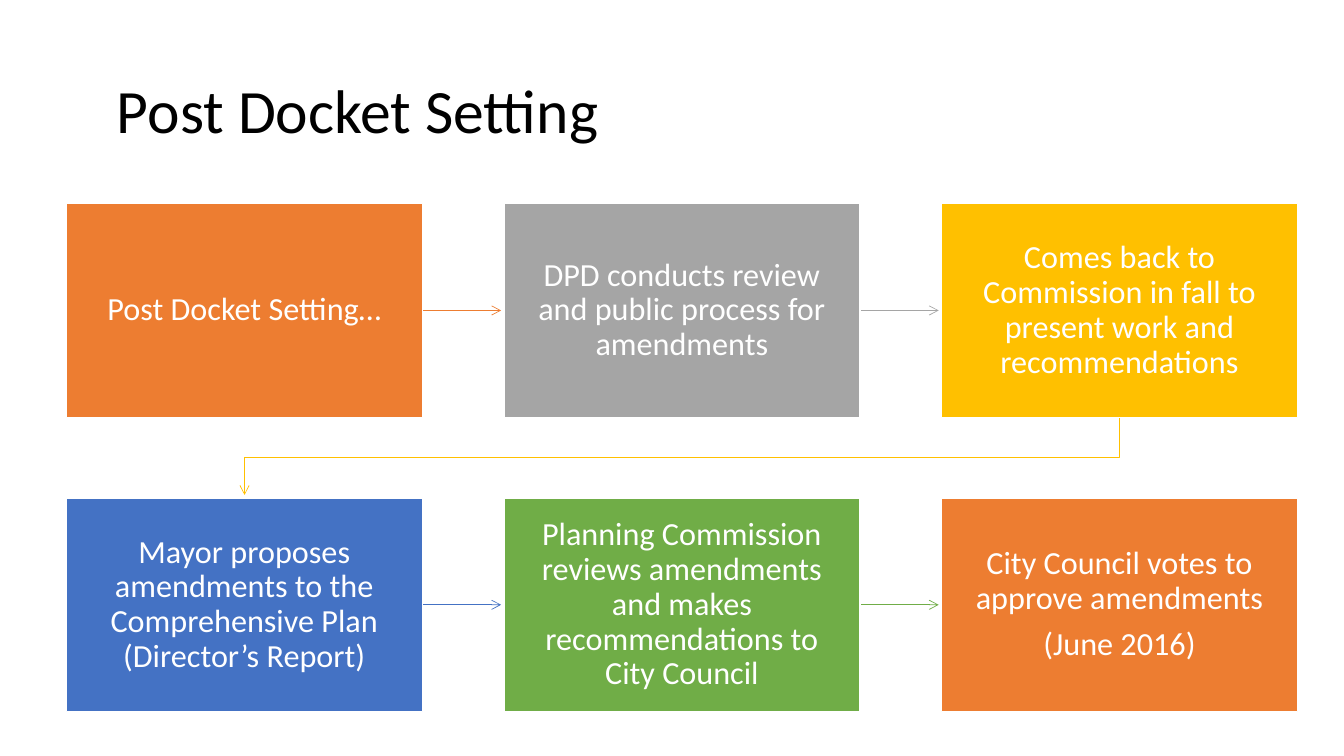
from lxml import etree
from pptx import Presentation
from pptx import util as u
from pptx.dml.color import RGBColor
from pptx.enum import shapes, text
from pptx.oxml import ns


def color(value):
    return RGBColor.from_string(value)


class FlowSlide:
    font = "Calibri"
    white = "FFFFFF"

    def __init__(self, presentation):
        self.slide = presentation.slides.add_slide(presentation.slide_layouts[6])
        self.shapes = self.slide.shapes

    def add_lines(self, shape, lines, size, ink, align, inset, **paragraph_format):
        frame = shape.text_frame
        frame_format = {
            "word_wrap": True,
            "vertical_anchor": text.MSO_ANCHOR.MIDDLE,
            "margin_left": u.Inches(inset),
            "margin_right": u.Inches(0.18),
            "margin_top": u.Inches(0.18),
            "margin_bottom": u.Inches(0.18),
        }
        for name, value in frame_format.items():
            setattr(frame, name, value)
        paragraph_format |= {"alignment": align, "line_spacing": 0.9}
        for index, line in enumerate(lines):
            paragraph = frame.add_paragraph() if index else frame.paragraphs[0]
            for name, value in paragraph_format.items():
                setattr(paragraph, name, value)
            run = paragraph.add_run()
            run.text = line
            for name, value in {"size": u.Pt(size), "name": self.font}.items():
                setattr(run.font, name, value)
            run.font.color.rgb = color(ink)

    def title(self, line, *box):
        shape = self.shapes.add_textbox(*map(u.Inches, box))
        self.add_lines(shape, [line], 44, "000000", text.PP_ALIGN.LEFT, 0.24)

    def step(self, lines, fill, *box):
        shape = self.shapes.add_shape(
            shapes.MSO_SHAPE.RECTANGLE, *map(u.Inches, box))
        shape.shadow.inherit = False
        shape.fill.solid()
        shape.fill.fore_color.rgb = color(fill)
        shape.line.color.rgb = color(self.white)
        shape.line.width = u.Pt(1)
        self.add_lines(shape, lines, 23, self.white, text.PP_ALIGN.CENTER, 0.18,
                       space_after=u.Pt(8))

    def arrow_style(self, shape, ink):
        shape.line.color.rgb = color(ink)
        shape.line.width = u.Pt(0.5)
        properties = shape._element.spPr
        outline = properties.find(ns.qn("a:ln"))
        etree.SubElement(outline, ns.qn("a:tailEnd"), type="arrow")
        if properties.find(ns.qn("a:effectLst")) is None:
            etree.SubElement(properties, ns.qn("a:effectLst"))

    def arrow(self, ink, left, right, y):
        connector = self.shapes.add_connector(
            shapes.MSO_CONNECTOR.STRAIGHT, *map(u.Inches, (left, y, right, y)))
        self.arrow_style(connector, ink)

    def bent_arrow(self, ink, points):
        start, *rest = [tuple(map(u.Inches, point)) for point in points]
        builder = self.shapes.build_freeform(*start)
        builder.add_line_segments(rest, close=False)
        shape = builder.convert_to_shape()
        shape.shadow.inherit = False
        shape.fill.background()
        self.arrow_style(shape, ink)


STEPS = [
    (["Post Docket Setting…"], "ED7D31"),
    (["DPD conducts review and public process for amendments"], "A5A5A5"),
    (["Comes back to Commission in fall to present work and recommendations"],
     "FFC000"),
    (["Mayor proposes amendments to the Comprehensive Plan (Director’s Report)"],
     "4472C4"),
    (["Planning Commission reviews amendments and makes recommendations "
      "to City Council"], "70AD47"),
    (["City Council votes to approve amendments", "(June 2016)"], "ED7D31"),
]
COLUMNS = 3
LEFT, TOP = 0.66, 2.02
WIDTH, HEIGHT = 3.53, 2.12
COLUMN_PITCH, ROW_PITCH = 4.34, 2.92
ARROW_GAP = 0.03


def main():
    presentation = Presentation()
    presentation.slide_width = u.Inches(13.33)
    presentation.slide_height = u.Inches(7.5)
    flow = FlowSlide(presentation)
    flow.title("Post Docket Setting", 0.92, 0.4, 11.5, 1.45)

    for index, (lines, fill) in enumerate(STEPS):
        row, column = divmod(index, COLUMNS)
        left = LEFT + column * COLUMN_PITCH
        top = TOP + row * ROW_PITCH
        if column < COLUMNS - 1:
            flow.arrow(fill, left + WIDTH, left + COLUMN_PITCH - ARROW_GAP,
                       top + HEIGHT / 2)
        elif index < len(STEPS) - 1:
            start_x, end_x = left + WIDTH / 2, LEFT + WIDTH / 2
            bottom, next_top = top + HEIGHT, top + ROW_PITCH
            middle = (bottom + next_top) / 2
            flow.bent_arrow(fill, [
                (start_x, bottom), (start_x, middle),
                (end_x, middle), (end_x, next_top - ARROW_GAP)])
        flow.step(lines, fill, left, top, WIDTH, HEIGHT)

    presentation.save("out.pptx")


if __name__ == "__main__":
    main()
